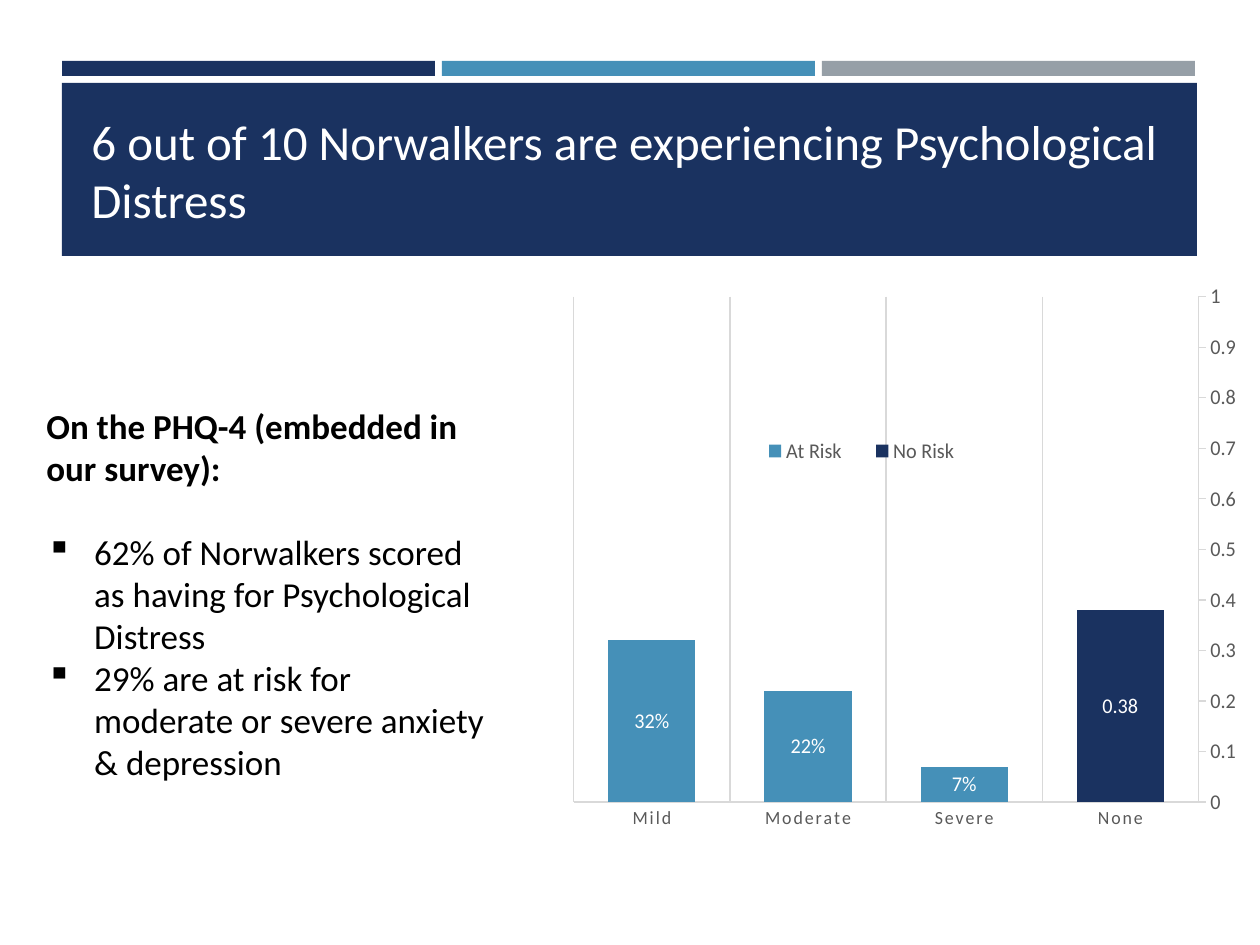
import copy
from dataclasses import dataclass

import pptx
import pptx.chart.data
import pptx.dml.color
import pptx.enum.chart
import pptx.enum.shapes
import pptx.enum.text
import pptx.oxml
import pptx.oxml.ns
import pptx.util

RGBColor = pptx.dml.color.RGBColor
NAVY = RGBColor(0x1A, 0x32, 0x60)
BLUE = RGBColor(0x45, 0x90, 0xB8)
GRAY = RGBColor(0x96, 0x9F, 0xA7)
LIGHT = RGBColor(0xD9, 0xD9, 0xD9)
DARK_GRAY = RGBColor(0x59, 0x59, 0x59)
WHITE = RGBColor(0xFF, 0xFF, 0xFF)
BLACK = RGBColor(0, 0, 0)
FONT = "Calibri"
PX = 914400 / 126
qn = pptx.oxml.ns.qn
CHART_NS = pptx.oxml.ns.nsdecls("c")


@dataclass(frozen=True)
class Box:
    left: int
    top: int
    width: int
    height: int
    fill: RGBColor = WHITE

    def emu(self) -> list[int]:
        return [round(n * PX) for n in (self.left, self.top, self.width, self.height)]


@dataclass(frozen=True)
class Line:
    text: str
    bold: bool = False
    bullet: bool = False
    space_before: int = 0


BANNER = Box(62, 83, 1135, 173, NAVY)
STRIPE_GAP = 7
STRIPE_WIDTH = (BANNER.width - 2 * STRIPE_GAP) // 3
STRIPES = [
    Box(BANNER.left + i * (STRIPE_WIDTH + STRIPE_GAP), 61, STRIPE_WIDTH, 15, color)
    for i, color in enumerate((NAVY, BLUE, GRAY))
]
TITLE = Box(79, 105, 1101, 130)
FINDINGS = Box(34, 398, 467, 394)
CHART = Box(501, 276, 735, 648)
LINES = [
    Line("On the PHQ-4 (embedded in our survey):", bold=True),
    Line("62% of Norwalkers scored as having for Psychological Distress",
         bullet=True, space_before=24),
    Line("29% are at risk for moderate or severe anxiety & depression", bullet=True),
]


def set_font(font, size: float, color: RGBColor, bold: bool = False) -> None:
    font.name, font.size, font.bold = FONT, pptx.util.Pt(size), bold
    font.color.rgb = color


def add_rectangle(slide, box: Box):
    shape = slide.shapes.add_shape(pptx.enum.shapes.MSO_SHAPE.RECTANGLE, *box.emu())
    shape.shadow.inherit = False
    shape.fill.solid()
    shape.fill.fore_color.rgb = box.fill
    shape.line.fill.background()
    return shape


def add_title(slide, box: Box, text: str) -> None:
    frame = slide.shapes.add_textbox(*box.emu()).text_frame
    frame.word_wrap = True
    frame.vertical_anchor = pptx.enum.text.MSO_ANCHOR.BOTTOM
    frame.text = text
    set_font(frame.paragraphs[0].runs[0].font, 28, WHITE)


def add_findings(slide, box: Box, lines: list[Line]) -> None:
    frame = add_rectangle(slide, box).text_frame
    frame.word_wrap = True
    frame.vertical_anchor = pptx.enum.text.MSO_ANCHOR.TOP
    for i, line in enumerate(lines):
        paragraph = frame.add_paragraph() if i else frame.paragraphs[0]
        paragraph.text = line.text
        paragraph.alignment = pptx.enum.text.PP_ALIGN.LEFT
        paragraph.space_before = pptx.util.Pt(line.space_before)
        set_font(paragraph.runs[0].font, 20, BLACK, line.bold)
        if line.bullet:
            properties = paragraph._p.get_or_add_pPr()
            indent = pptx.util.Inches(0.38)
            properties.set("marL", str(indent))
            properties.set("indent", str(-indent))
            properties.append(pptx.oxml.parse_xml(
                f'<a:buChar {pptx.oxml.ns.nsdecls("a")} char="▪"/>'))


def make_layout(x: float, y: float, width: float, height: float, inner: bool = False):
    target = '<c:layoutTarget val="inner"/>' if inner else ""
    return pptx.oxml.parse_xml(
        f'<c:layout {CHART_NS}><c:manualLayout>{target}'
        f'<c:xMode val="edge"/><c:yMode val="edge"/><c:x val="{x}"/><c:y val="{y}"/>'
        f'<c:w val="{width}"/><c:h val="{height}"/></c:manualLayout></c:layout>')


def style_line(line) -> None:
    line.color.rgb = LIGHT
    line.width = pptx.util.Pt(0.75)


def move_to_right_axis(chart) -> None:
    """Put the second series in its own bar group with an axis at the right."""
    area = chart._chartSpace.chart.plotArea
    left_bars = area.find(qn("c:barChart"))
    right_bars = copy.deepcopy(left_bars)
    left_bars.remove(left_bars.findall(qn("c:ser"))[1])
    right_bars.remove(right_bars.findall(qn("c:ser"))[0])
    left_bars.addnext(right_bars)
    axes = [area.find(qn("c:catAx")), area.find(qn("c:valAx"))]
    right_axes = [copy.deepcopy(axis) for axis in axes]
    identifiers = ["50010", "50020"]
    for reference, identifier in zip(right_bars.findall(qn("c:axId")), identifiers):
        reference.set("val", identifier)
    for i, axis in enumerate(right_axes):
        axis.find(qn("c:axId")).set("val", identifiers[i])
        axis.find(qn("c:crossAx")).set("val", identifiers[1 - i])
        gridlines = axis.find(qn("c:majorGridlines"))
        if gridlines is not None:
            axis.remove(gridlines)
    right_axes[0].find(qn("c:delete")).set("val", "1")
    right_axes[1].find(qn("c:axPos")).set("val", "r")
    right_axes[1].find(qn("c:crosses")).set("val", "max")
    axes[1].find(qn("c:delete")).set("val", "1")
    axes[1].addnext(right_axes[1])
    right_axes[1].addnext(right_axes[0])


def add_risk_chart(slide, box: Box) -> None:
    enums = pptx.enum.chart
    data = pptx.chart.data.CategoryChartData()
    data.categories = ["Mild", "Moderate", "Severe", "None"]
    data.add_series("At Risk", [0.32, 0.22, 0.07, None])
    data.add_series("No Risk", [None, None, None, 0.38])
    chart = slide.shapes.add_chart(
        enums.XL_CHART_TYPE.COLUMN_STACKED, *box.emu(), data).chart
    chart.has_title = False
    set_font(chart.font, 10, BLACK)
    plot = chart.plots[0]
    plot.vary_by_categories = False
    plot.gap_width, plot.overlap = 79, 100

    # Series and their labels
    for series, color, number_format in zip(plot.series, (BLUE, NAVY), ("0%", "General")):
        series.format.fill.solid()
        series.format.fill.fore_color.rgb = color
        labels = series.data_labels
        labels.show_value = True
        labels.number_format = number_format
        labels.number_format_is_linked = False
        labels.position = enums.XL_LABEL_POSITION.CENTER
        set_font(labels.font, 12, WHITE)

    # Axes
    category_axis, value_axis = chart.category_axis, chart.value_axis
    category_axis.has_major_gridlines = True
    style_line(category_axis.major_gridlines.format.line)
    category_axis.major_tick_mark = enums.XL_TICK_MARK.NONE
    value_axis.has_major_gridlines = False
    value_axis.major_tick_mark = enums.XL_TICK_MARK.OUTSIDE
    value_axis.minimum_scale, value_axis.maximum_scale = 0, 1
    value_axis.major_unit = 0.1
    value_axis.tick_labels.number_format = "General"
    value_axis.tick_labels.number_format_is_linked = False
    for axis, size in ((category_axis, 10.6), (value_axis, 12)):
        style_line(axis.format.line)
        set_font(axis.tick_labels.font, size, DARK_GRAY)
    category_axis._element.find(".//" + qn("a:defRPr")).set("spc", "120")
    move_to_right_axis(chart)

    # Legend and plot placement
    chart.has_legend = True
    legend = chart.legend
    legend.position = enums.XL_LEGEND_POSITION.TOP
    legend.include_in_layout = False
    set_font(legend.font, 12, DARK_GRAY)
    for old in legend._element.findall(qn("c:layout")):
        legend._element.remove(old)
    legend._element.find(qn("c:legendPos")).addnext(make_layout(0.34, 0.24, 0.34, 0.06))
    area = chart._chartSpace.chart.plotArea
    for old in area.findall(qn("c:layout")):
        area.remove(old)
    area.insert(0, make_layout(0.103, 0.032, 0.883, 0.78, inner=True))


def main() -> None:
    presentation = pptx.Presentation()
    presentation.slide_width = pptx.util.Inches(10)
    presentation.slide_height = pptx.util.Inches(7.5)
    slide = presentation.slides.add_slide(presentation.slide_layouts[6])

    # Header
    for box in [*STRIPES, BANNER]:
        add_rectangle(slide, box)
    add_title(slide, TITLE, "6 out of 10 Norwalkers are experiencing Psychological Distress")

    # Body
    add_risk_chart(slide, CHART)
    add_findings(slide, FINDINGS, LINES)
    presentation.save("out.pptx")


if __name__ == "__main__":
    main()
